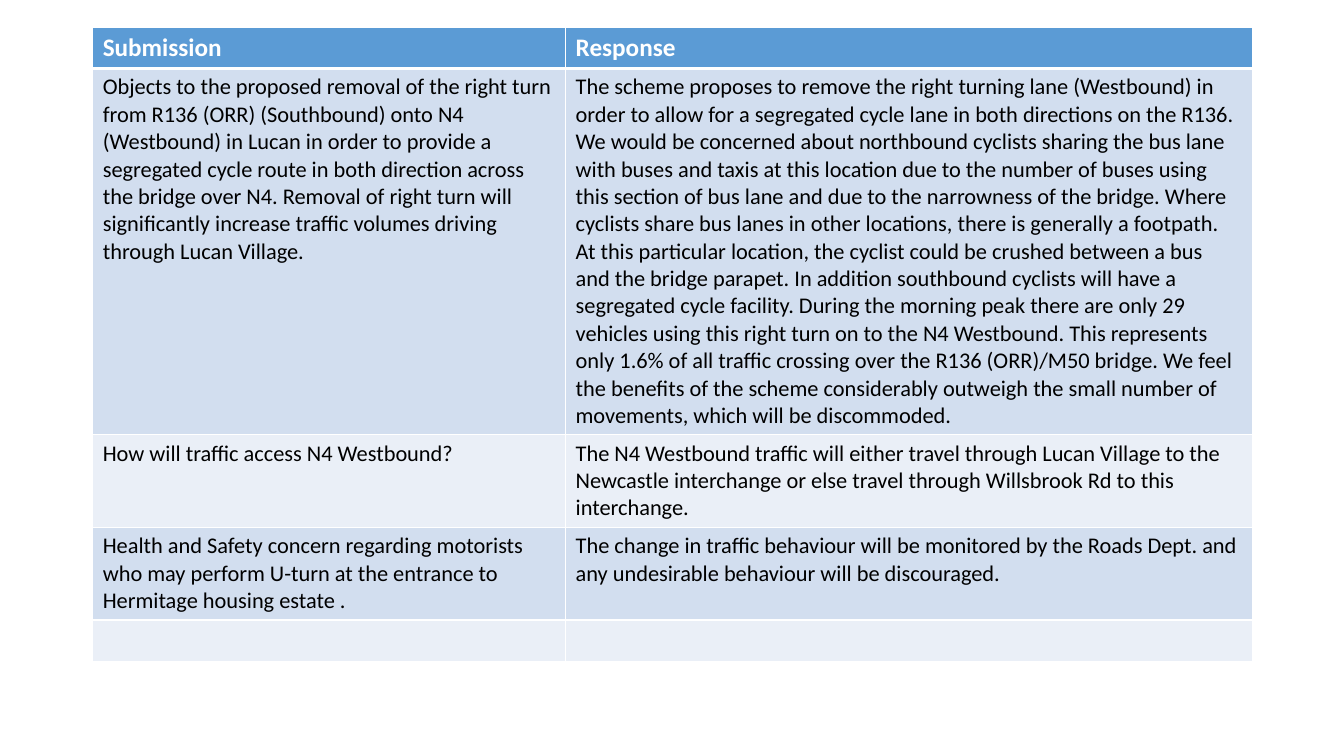
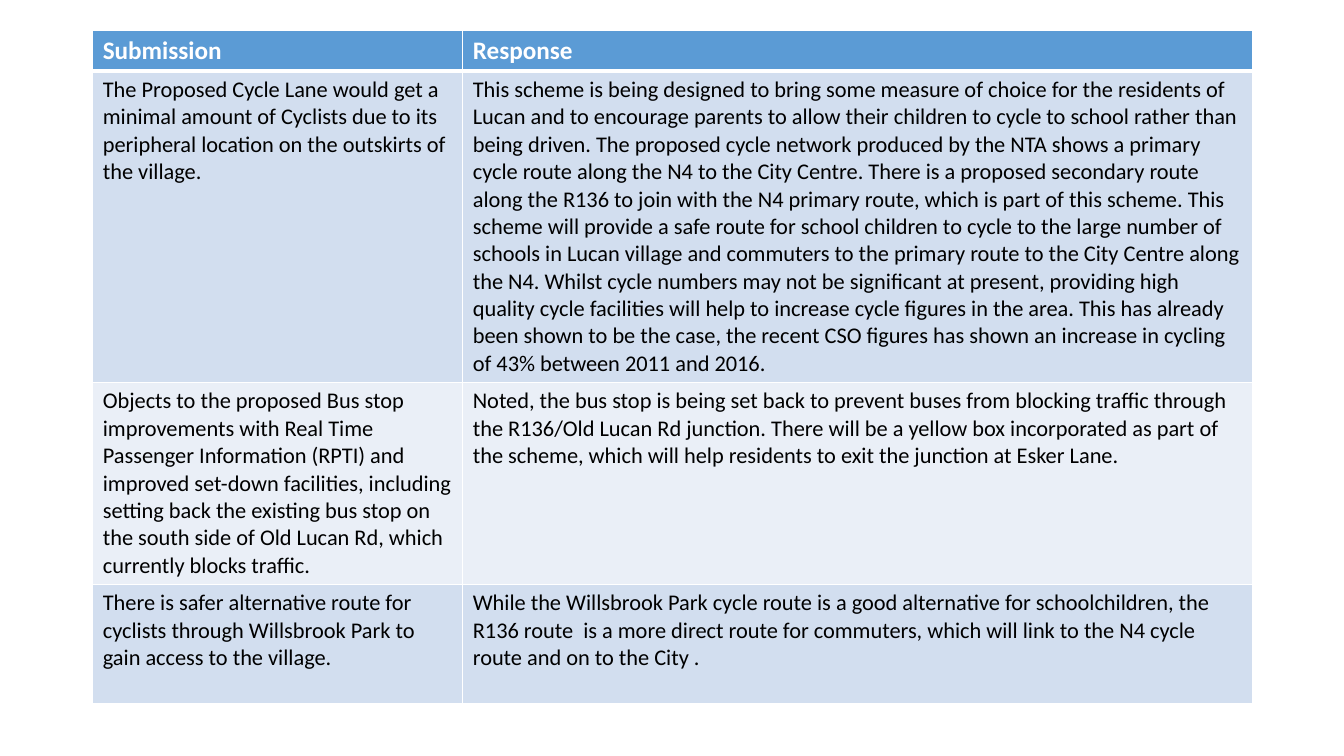
"""Build two slides of submissions and responses on a cycle scheme."""
import pptx
import pptx.util
import pptx.dml.color
import pptx.oxml
import pptx.oxml.ns

PX = 9144
FONT = "Calibri"
LEFT = 92
COLORS = {
    "head": "5B9BD5",
    "odd": "D2DEEF",
    "even": "EAEFF7",
    "white": "FFFFFF",
    "black": "000000",
}
HEADER = ("Submission", "Response")

SLIDES = [
    {
        "top": 27,
        "cols": (469, 681),
        "rows": (41, 362, 92, 92, 41),
        "text": [
            (
                "Objects to the proposed removal of the right turn from R136 (ORR) "
                "(Southbound) onto N4 (Westbound) in Lucan in order to provide a "
                "segregated cycle route in both direction across the bridge over N4. "
                "Removal of right turn will significantly increase traffic volumes "
                "driving through Lucan Village.",
                " ".join([
                    "The scheme proposes to remove the right turning lane (Westbound) "
                    "in order to allow for a segregated cycle lane in both directions "
                    "on the R136. We would be concerned about northbound cyclists "
                    "sharing the bus lane with buses and taxis at this location due to "
                    "the number of buses using this section of bus lane and due to the "
                    "narrowness of the bridge.",
                    "Where cyclists share bus lanes in other locations, there is "
                    "generally a footpath. At this particular location, the cyclist "
                    "could be crushed between a bus and the bridge parapet. In addition "
                    "southbound cyclists will have a segregated cycle facility.",
                    "During the morning peak there are only 29 vehicles using this "
                    "right turn on to the N4 Westbound. This represents only 1.6% of "
                    "all traffic crossing over the R136 (ORR)/M50 bridge. We feel the "
                    "benefits of the scheme considerably outweigh the small number of "
                    "movements, which will be discommoded.",
                ]),
            ),
            (
                "How will traffic access N4 Westbound?",
                "The N4 Westbound traffic will either travel through Lucan Village to "
                "the Newcastle interchange or else travel through Willsbrook Rd to this "
                "interchange.",
            ),
            (
                "Health and Safety concern regarding motorists who may perform U-turn "
                "at the entrance to Hermitage housing estate .",
                "The change in traffic behaviour will be monitored by the Roads Dept. "
                "and any undesirable behaviour will be discouraged.",
            ),
            ("", ""),
        ],
    },
    {
        "top": 30,
        "cols": (367, 783),
        "rows": (40, 309, 200, 118),
        "text": [
            (
                "The Proposed Cycle Lane would get a minimal amount of Cyclists due to "
                "its peripheral location on the outskirts of the village.",
                " ".join([
                    "This scheme is being designed to bring some measure of choice for "
                    "the residents of Lucan and to encourage parents to allow their "
                    "children to cycle to school rather than being driven. The proposed "
                    "cycle network produced by the NTA shows a primary cycle route "
                    "along the N4 to the City Centre.",
                    "There is a proposed secondary route along the R136 to join with "
                    "the N4 primary route, which is part of this scheme. This scheme "
                    "will provide a safe route for school children to cycle to the "
                    "large number of schools in Lucan village and commuters to the "
                    "primary route to the City Centre along the N4.",
                    "Whilst cycle numbers may not be significant at present, providing "
                    "high quality cycle facilities will help to increase cycle figures "
                    "in the area. This has already been shown to be the case, the "
                    "recent CSO figures has shown an increase in cycling of 43% between "
                    "2011 and 2016.",
                ]),
            ),
            (
                "Objects to the proposed Bus stop improvements with Real Time Passenger "
                "Information (RPTI) and improved set-down facilities, including setting "
                "back the existing bus stop on the south side of Old Lucan Rd, which "
                "currently blocks traffic.",
                "Noted, the bus stop is being set back to prevent buses from blocking "
                "traffic through the R136/Old Lucan Rd junction. There will be a yellow "
                "box incorporated as part of the scheme, which will help residents to "
                "exit the junction at Esker Lane.",
            ),
            (
                "There is safer alternative route for cyclists through Willsbrook Park "
                "to gain access to the village.",
                "While the Willsbrook Park cycle route is a good alternative for "
                "schoolchildren, the R136 route  is a more direct route for commuters, "
                "which will link to the N4 cycle route and on to the City .",
            ),
        ],
    },
]


def color(name):
    """Return the named colour."""
    return pptx.dml.color.RGBColor.from_string(COLORS[name])


def border(cell, side, points):
    """Draw one white edge of a cell."""
    cell._tc.get_or_add_tcPr().append(pptx.oxml.parse_xml(
        f'<a:ln{side} {pptx.oxml.ns.nsdecls("a")} w="{points * 12700}">'
        f'<a:solidFill><a:srgbClr val="{COLORS["white"]}"/></a:solidFill>'
        f'</a:ln{side}>'))


deck = pptx.Presentation()
deck.slide_width = 1333 * PX
deck.slide_height = 750 * PX

for page in SLIDES:
    slide = deck.slides.add_slide(deck.slide_layouts[6])
    cols, rows = page["cols"], page["rows"]
    table = slide.shapes.add_table(
        len(rows), len(cols), LEFT * PX, page["top"] * PX,
        sum(cols) * PX, sum(rows) * PX).table
    for col, width in zip(table.columns, cols):
        col.width = width * PX
    for row, height in zip(table.rows, rows):
        row.height = height * PX

    for r, texts in enumerate([HEADER] + page["text"]):
        head = r == 0
        fill = "head" if head else "odd" if r % 2 else "even"
        for c, text in enumerate(texts):
            cell = table.cell(r, c)
            border(cell, "L", 1)
            border(cell, "R", 1)
            border(cell, "T", 3 if r == 1 else 1)
            border(cell, "B", 3 if head else 1)
            cell.fill.solid()
            cell.fill.fore_color.rgb = color(fill)
            if text:
                cell.text_frame.text = text
                font = cell.text_frame.paragraphs[0].runs[0].font
                font.name = FONT
                font.size = pptx.util.Pt(18 if head else 16)
                font.bold = head
                font.color.rgb = color("white" if head else "black")

deck.save("out.pptx")
